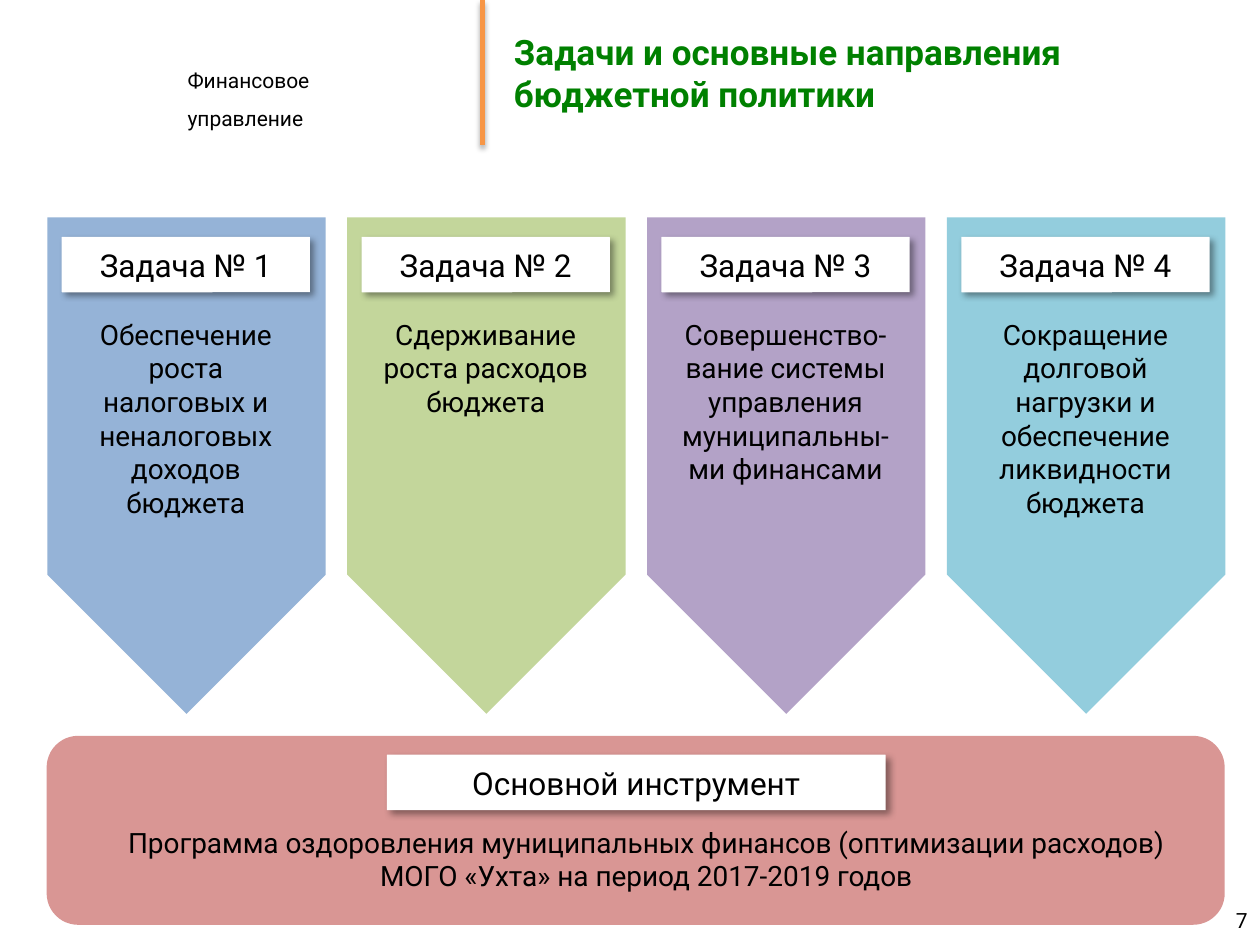
from lxml import etree
from pptx import Presentation
from pptx.dml.color import RGBColor
from pptx.enum.shapes import MSO_CONNECTOR, MSO_SHAPE
from pptx.enum.text import MSO_ANCHOR, MSO_AUTO_SIZE, PP_ALIGN
from pptx.oxml.ns import qn
from pptx.util import Inches, Pt

FONT = "Roboto"
BLACK = RGBColor(0x00, 0x00, 0x00)
WHITE = RGBColor(0xFF, 0xFF, 0xFF)
GREEN = RGBColor(0x00, 0x80, 0x00)
ORANGE = RGBColor(0xF7, 0x96, 0x46)
ROSE = RGBColor(0xD9, 0x96, 0x94)
BLUE = RGBColor(0x95, 0xB3, 0xD7)
LIME = RGBColor(0xC3, 0xD6, 0x9B)
PURPLE = RGBColor(0xB3, 0xA2, 0xC7)
AQUA = RGBColor(0x93, 0xCD, 0xDD)

TASKS = [
    ("Обеспечение роста налоговых и неналоговых доходов бюджета", BLUE, 1.45),
    ("Сдерживание роста расходов бюджета", LIME, 0.91),
    ("Совершенство-вание системы управления муниципальны-ми финансами", PURPLE, 1.45),
    ("Сокращение долговой нагрузки и обеспечение ликвидности бюджета", AQUA, 1.72),
]
COLUMN_PITCH = 2.38


def write(frame, text, size=16, color=BLACK, bold=False, align=PP_ALIGN.LEFT,
          anchor=MSO_ANCHOR.TOP, spacing=None):
    frame.word_wrap = True
    frame.vertical_anchor = anchor
    paragraph = frame.paragraphs[0]
    paragraph.text = text
    paragraph.alignment = align
    paragraph.line_spacing = spacing
    font = paragraph.font
    font.name, font.size, font.bold = FONT, Pt(size), bold
    font.color.rgb = color


class SlideBuilder:
    def __init__(self, slide):
        self.slide = slide

    def set_shadow(self, element, alpha, blur, distance, angle):
        properties = element._element.spPr
        for old in properties.findall(qn("a:effectLst")):
            properties.remove(old)
        effects = etree.SubElement(properties, qn("a:effectLst"))
        outer = etree.SubElement(
            effects, qn("a:outerShdw"), blurRad=str(Pt(blur)), dist=str(Pt(distance)),
            dir=str(angle * 60000), rotWithShape="0")
        shade = etree.SubElement(outer, qn("a:srgbClr"), val=str(BLACK))
        etree.SubElement(shade, qn("a:alpha"), val=str(alpha * 1000))

    def text(self, left, top, width, height, text, grow=False, **style):
        box = self.slide.shapes.add_textbox(
            Inches(left), Inches(top), Inches(width), Inches(height))
        write(box.text_frame, text, **style)
        if grow:
            box.text_frame.auto_size = MSO_AUTO_SIZE.SHAPE_TO_FIT_TEXT

    def shape(self, kind, left, top, width, height, color, rotation=0):
        shape = self.slide.shapes.add_shape(
            kind, Inches(left), Inches(top), Inches(width), Inches(height))
        shape.shadow.inherit = False
        shape.fill.solid()
        shape.fill.fore_color.rgb = color
        shape.line.fill.background()
        shape.rotation = rotation
        return shape

    def label(self, left, top, width, text):
        plate = self.shape(MSO_SHAPE.ROUNDED_RECTANGLE, left, top, width, 0.44, WHITE)
        plate.adjustments[0] = 0.01
        self.set_shadow(plate, alpha=40, blur=4, distance=3, angle=45)
        write(plate.text_frame, text, size=18, align=PP_ALIGN.CENTER,
              anchor=MSO_ANCHOR.MIDDLE)

    def line(self, x1, y1, x2, y2, color, width):
        rule = self.slide.shapes.add_connector(
            MSO_CONNECTOR.STRAIGHT, Inches(x1), Inches(y1), Inches(x2), Inches(y2))
        rule.line.color.rgb = color
        rule.line.width = Pt(width)
        self.set_shadow(rule, alpha=35, blur=3.1, distance=1.8, angle=90)


def main():
    deck = Presentation()
    deck.slide_width, deck.slide_height = Inches(10), Inches(7.5)
    page = SlideBuilder(deck.slides.add_slide(deck.slide_layouts[6]))

    # Header
    page.text(1.39, 0.39, 2.1, 0.7, "Финансовое\vуправление", size=12, spacing=1.5)
    page.line(3.83, 0, 3.83, 1.15, ORANGE, 3)
    page.text(3.98, 0, 6.02, 1.15, "Задачи и основные направления бюджетной политики",
              size=20, color=GREEN, bold=True, anchor=MSO_ANCHOR.MIDDLE)

    # Task columns: arrow pointing down, number plate, description
    for index, (task, color, height) in enumerate(TASKS):
        shift = index * COLUMN_PITCH
        page.shape(MSO_SHAPE.PENTAGON, shift - 0.49, 2.59, 3.94, 2.21, color, rotation=90)
        page.label(shift + 0.49, 1.88, 1.97, f"Задача № {index + 1}")
        page.text(shift + 0.49, 2.47, 1.97, height, task, grow=True,
                  align=PP_ALIGN.CENTER)

    # Main instrument
    page.shape(MSO_SHAPE.ROUNDED_RECTANGLE, 0.37, 5.84, 9.35, 1.5, ROSE)
    page.text(0.68, 6.5, 8.9, 0.64,
              "Программа оздоровления муниципальных финансов (оптимизации расходов) "
              "МОГО «Ухта» на период 2017-2019 годов", grow=True, align=PP_ALIGN.CENTER)
    page.label(3.07, 5.99, 3.96, "Основной инструмент")

    # Page number
    page.text(7.67, 7.1, 2.33, 0.4, "7", size=12, align=PP_ALIGN.RIGHT,
              anchor=MSO_ANCHOR.MIDDLE)

    deck.save("out.pptx")


if __name__ == "__main__":
    main()
